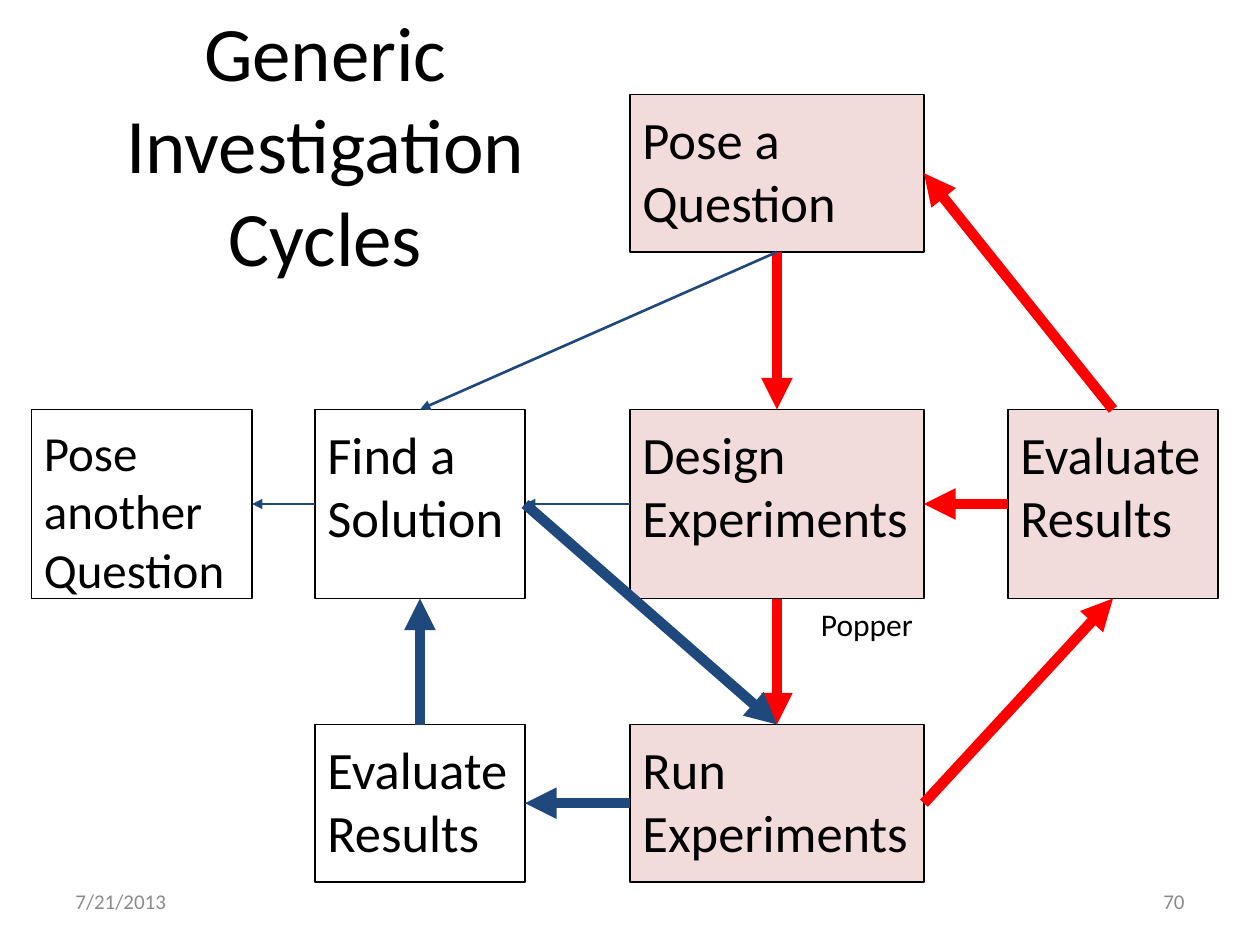
import pptx
import pptx.util
import pptx.dml.color
import pptx.enum.shapes
import pptx.enum.text
import pptx.oxml.ns
import lxml.etree

RGBColor = pptx.dml.color.RGBColor
Align = pptx.enum.text.PP_ALIGN
Anchor = pptx.enum.text.MSO_ANCHOR

BLACK = RGBColor(0x00, 0x00, 0x00)
GREY = RGBColor(0x8C, 0x8C, 0x8C)
PINK = RGBColor(0xF2, 0xDC, 0xDB)
RED = RGBColor(0xFF, 0x00, 0x00)
BLUE = RGBColor(0x1F, 0x49, 0x7D)

FONT = "Calibri"
COLUMNS, ROWS = 120, 90  # grid of twelve units to the inch
UNIT = pptx.util.Inches(10) // COLUMNS
TOP, LEFT, BOTTOM, RIGHT = range(4)  # connection sites of a rectangle

# name: (text, column, row, columns wide, rows high, fill, size)
BOXES = {
    "pose": ("Pose a Question", 60, 9, 28, 15, PINK, 30),
    "design": ("Design\nExperiments", 60, 39, 28, 18, PINK, 30),
    "find": ("Find a Solution", 30, 39, 20, 18, None, 30),
    "evaluate solution": ("Evaluate Results", 30, 69, 20, 15, None, 30),
    "run": ("Run\nExperiments", 60, 69, 28, 15, PINK, 30),
    "evaluate design": ("Evaluate Results", 96, 39, 20, 18, PINK, 30),
    "pose another": ("Pose another\nQuestion", 3, 39, 21, 18, None, 28),
}

# start box, side, end box, side, colour, width
ARROWS = [
    ("pose", BOTTOM, "design", TOP, RED, 6),
    ("pose", BOTTOM, "find", TOP, BLUE, 1.5),
    ("evaluate design", TOP, "pose", RIGHT, RED, 6),
    ("design", BOTTOM, "run", TOP, RED, 6),
    ("find", RIGHT, "run", TOP, BLUE, 6),
    ("run", LEFT, "evaluate solution", RIGHT, BLUE, 6),
    ("run", RIGHT, "evaluate design", BOTTOM, RED, 6),
    ("evaluate solution", TOP, "find", BOTTOM, BLUE, 6),
    ("evaluate design", LEFT, "design", RIGHT, RED, 6),
    ("find", LEFT, "pose another", RIGHT, BLUE, 1.5),
    ("design", LEFT, "find", RIGHT, BLUE, 1.5),
]


def grid(*cells):
    return [round(cell * UNIT) for cell in cells]


def write(shape, text, size=30, color=BLACK, align=Align.LEFT,
          anchor=Anchor.TOP, inset=0.1, wrap=True):
    frame = shape.text_frame
    frame.word_wrap = wrap
    frame.vertical_anchor = anchor
    frame.margin_left = frame.margin_right = pptx.util.Inches(0.1)
    frame.margin_top = frame.margin_bottom = pptx.util.Inches(inset)
    frame.text = text
    for para in frame.paragraphs:
        para.alignment = align
        for span in para.runs:
            span.font.name = FONT
            span.font.size = pptx.util.Pt(size)
            span.font.color.rgb = color


def add_label(page, text, cells, **style):
    label = page.shapes.add_textbox(*grid(*cells))
    write(label, text, **style)
    return label


def add_box(page, text, column, row, width, height, fill, size):
    box = page.shapes.add_shape(pptx.enum.shapes.MSO_SHAPE.RECTANGLE,
                                *grid(column, row, width, height))
    box.shadow.inherit = False
    if fill is None:
        box.fill.background()
    else:
        box.fill.solid()
        box.fill.fore_color.rgb = fill
    box.line.color.rgb = BLACK
    box.line.width = pptx.util.Pt(0.75)
    write(box, text, size=size)
    return box


def add_arrow(page, start, start_side, end, end_side, color, width):
    arrow = page.shapes.add_connector(
        pptx.enum.shapes.MSO_CONNECTOR.STRAIGHT, 0, 0, 0, 0)
    arrow.begin_connect(start, start_side)
    arrow.end_connect(end, end_side)
    arrow.line.color.rgb = color
    arrow.line.width = pptx.util.Pt(width)
    # Arrowhead, and no shadow
    qn = pptx.oxml.ns.qn
    properties = arrow.line._get_or_add_ln()
    lxml.etree.SubElement(properties, qn("a:tailEnd"), type="triangle")
    lxml.etree.SubElement(properties.getparent(), qn("a:effectLst"))


def main():
    deck = pptx.Presentation()
    deck.slide_width, deck.slide_height = grid(COLUMNS, ROWS)
    page = deck.slides.add_slide(deck.slide_layouts[6])

    # Title
    add_label(page, "Generic Investigation Cycles", (6, 1, 50, 27),
              size=44, align=Align.CENTER, anchor=Anchor.BOTTOM)

    # Steps and the arrows between them
    boxes = {name: add_box(page, *box) for name, box in BOXES.items()}
    for start, start_side, end, end_side, color, width in ARROWS:
        add_arrow(page, boxes[start], start_side, boxes[end], end_side,
                  color, width)

    # Note beside the experiment cycle
    note = add_label(page, "Popper", (77, 57, 11.4, 4.9),
                     size=18, inset=0.05, wrap=False)
    note.text_frame.auto_size = pptx.enum.text.MSO_AUTO_SIZE.SHAPE_TO_FIT_TEXT

    # Footer
    for text, column, align in (("7/21/2013", 6, Align.LEFT),
                                ("70", 86, Align.RIGHT)):
        add_label(page, text, (column, 83.4, 28, 4.8), size=12, color=GREY,
                  align=align, anchor=Anchor.MIDDLE, inset=0.05)

    deck.save("out.pptx")


if __name__ == "__main__":
    main()
